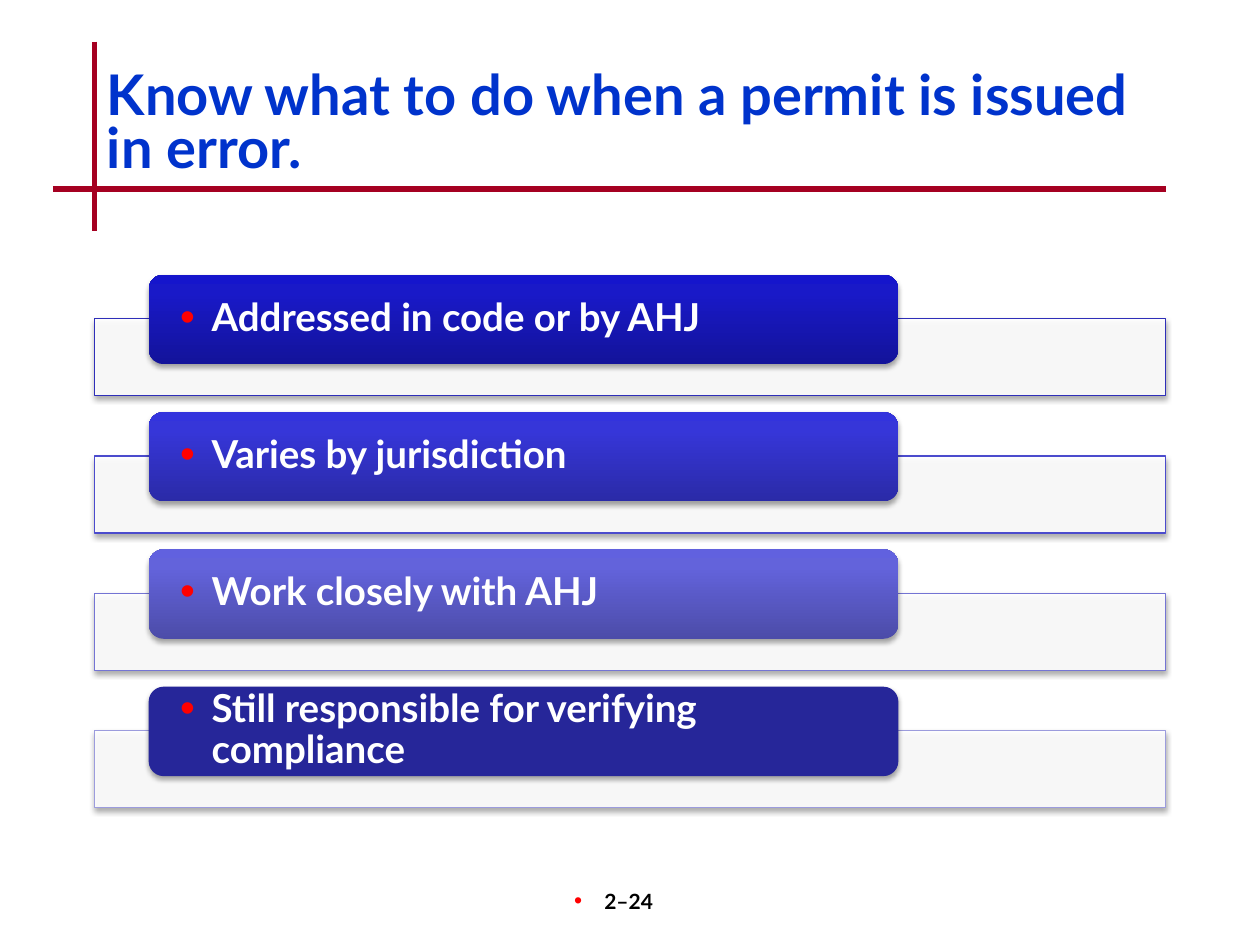
"""Builds the slide on permits issued in error."""
from dataclasses import dataclass

from lxml import etree
from pptx import Presentation
from pptx.dml.color import RGBColor
from pptx.enum.shapes import MSO_CONNECTOR, MSO_SHAPE
from pptx.enum.text import MSO_ANCHOR, PP_ALIGN
from pptx.oxml.ns import qn
from pptx.util import Inches, Pt

STRAIGHT = MSO_CONNECTOR.STRAIGHT
RECTANGLE = MSO_SHAPE.RECTANGLE
ROUNDED = MSO_SHAPE.ROUNDED_RECTANGLE
TOP, MIDDLE = MSO_ANCHOR.TOP, MSO_ANCHOR.MIDDLE
LEFT, CENTER = PP_ALIGN.LEFT, PP_ALIGN.CENTER


@dataclass(frozen=True)
class Theme:
    font: str = "Lato"
    title_color: str = "0033CC"
    rule_color: str = "A50021"
    bullet_color: str = "FF0000"
    white: str = "FFFFFF"
    black: str = "000000"
    title_size: int = 32
    label_size: int = 22
    number_size: int = 12
    rule_width: float = 3
    bar_width: float = 0.75


THEME = Theme()
ROW_TOP = 2.53
ROW_PITCH = 1.09
ROWS = [
    ("Addressed in code or by AHJ", "2E2EB9", ("13139A", "1919C8", "1515CC")),
    ("Varies by jurisdiction", "4B4BCD", ("2A2AA7", "3636D9", "3333DD")),
    ("Work closely with AHJ", "7474D4", ("4C4CA9", "6363DB", "6161DF")),
    ("Still responsible for verifying compliance", "9C9CDD", ("262699",)),
]


def add_child(parent, tag, **attributes):
    child = etree.SubElement(parent, qn(tag))
    for name, value in attributes.items():
        child.set(name, str(value))
    return child


def add_color(parent, color, alpha=None):
    element = add_child(parent, "a:srgbClr", val=color)
    if alpha is not None:
        add_child(element, "a:alpha", val=alpha * 1000)


def add_rule(page, start, end):
    rule = page.shapes.add_connector(STRAIGHT, *map(Inches, start + end))
    rule.line.color.rgb = RGBColor.from_string(THEME.rule_color)
    rule.line.width = Pt(THEME.rule_width)
    add_child(rule._element.spPr, "a:effectLst")


def add_panel(page, kind, place):
    panel = page.shapes.add_shape(kind, *map(Inches, place))
    panel.line.fill.background()
    panel.shadow.inherit = False
    effects = panel._element.spPr.find(qn("a:effectLst"))
    shadow = add_child(effects, "a:outerShdw", blurRad=Pt(3.1), dist=Pt(1.8),
                       dir=90 * 60000, rotWithShape=0)
    add_color(shadow, THEME.black, 35)
    return panel


def fill_solid(panel, color, alpha=None):
    panel.fill.solid()
    panel.fill.fore_color.rgb = RGBColor.from_string(color)
    if alpha is not None:
        element = panel._element.spPr.find(qn("a:solidFill"))[0]
        add_child(element, "a:alpha", val=alpha * 1000)


def fill_gradient(panel, colors):
    panel.fill.gradient()
    gradient = panel._element.spPr.find(qn("a:gradFill"))
    for child in list(gradient):
        gradient.remove(child)
    stops = add_child(gradient, "a:gsLst")
    for position, color in zip((0, 80, 100), colors):
        add_color(add_child(stops, "a:gs", pos=position * 1000), color)
    add_child(gradient, "a:lin", ang=270 * 60000, scaled=0)


def add_bullet(para, indent, size):
    properties = para._p.get_or_add_pPr()
    properties.set("marL", str(Inches(indent)))
    properties.set("indent", str(-Inches(indent)))
    add_color(add_child(properties, "a:buClr"), THEME.bullet_color)
    add_child(properties, "a:buSzPct", val=size * 1000)
    add_child(properties, "a:buFont", typeface="Arial")
    add_child(properties, "a:buChar", char="•")


def add_text(page, place, text, size, color, anchor=MIDDLE, align=LEFT,
             spacing=1.0, insets=(0.1, 0.05, 0.1, 0.05), bullet=None):
    box = page.shapes.add_textbox(*map(Inches, place))
    frame = box.text_frame
    frame.word_wrap = True
    frame.vertical_anchor = anchor
    (frame.margin_left, frame.margin_top,
     frame.margin_right, frame.margin_bottom) = map(Inches, insets)
    frame.text = text
    para = frame.paragraphs[0]
    para.alignment = align
    para.line_spacing = spacing
    if bullet:
        add_bullet(para, *bullet)
    font = para.runs[0].font
    font.name = THEME.font
    font.size = Pt(size)
    font.bold = True
    font.color.rgb = RGBColor.from_string(color)


def add_row(page, top, text, outline, colors):
    bar = add_panel(page, RECTANGLE, (0.75, top, 8.5, 0.61))
    fill_solid(bar, THEME.white, 90)
    bar.line.color.rgb = RGBColor.from_string(outline)
    bar.line.width = Pt(THEME.bar_width)
    label = add_panel(page, ROUNDED, (1.18, top - 0.35, 5.95, 0.71))
    if len(colors) == 1:
        fill_solid(label, colors[0])
    else:
        fill_gradient(label, colors)
    add_text(page, (1.21, top - 0.32, 5.88, 0.64), text, THEME.label_size,
             THEME.white, spacing=0.9, insets=(0.22, 0, 0.22, 0),
             bullet=(0.25, 110))


def main():
    deck = Presentation()
    deck.slide_width, deck.slide_height = Inches(10), Inches(7.5)
    page = deck.slides.add_slide(deck.slide_layouts[6])
    add_rule(page, (0.75, 0.33), (0.75, 1.83))
    add_rule(page, (0.42, 1.5), (9.25, 1.5))
    add_text(page, (3.92, 7, 2.08, 0.5), "2–24", THEME.number_size,
             THEME.black, TOP, CENTER, insets=(0.1, 0.05, 0.28, 0.05),
             bullet=(0.24, 110))
    add_text(page, (0.75, 0.5, 8.5, 1),
             "Know what to do when a permit is issued in error.",
             THEME.title_size, THEME.title_color, spacing=0.8)
    for index, row in enumerate(ROWS):
        add_row(page, ROW_TOP + index * ROW_PITCH, *row)
    deck.save("out.pptx")


if __name__ == "__main__":
    main()
